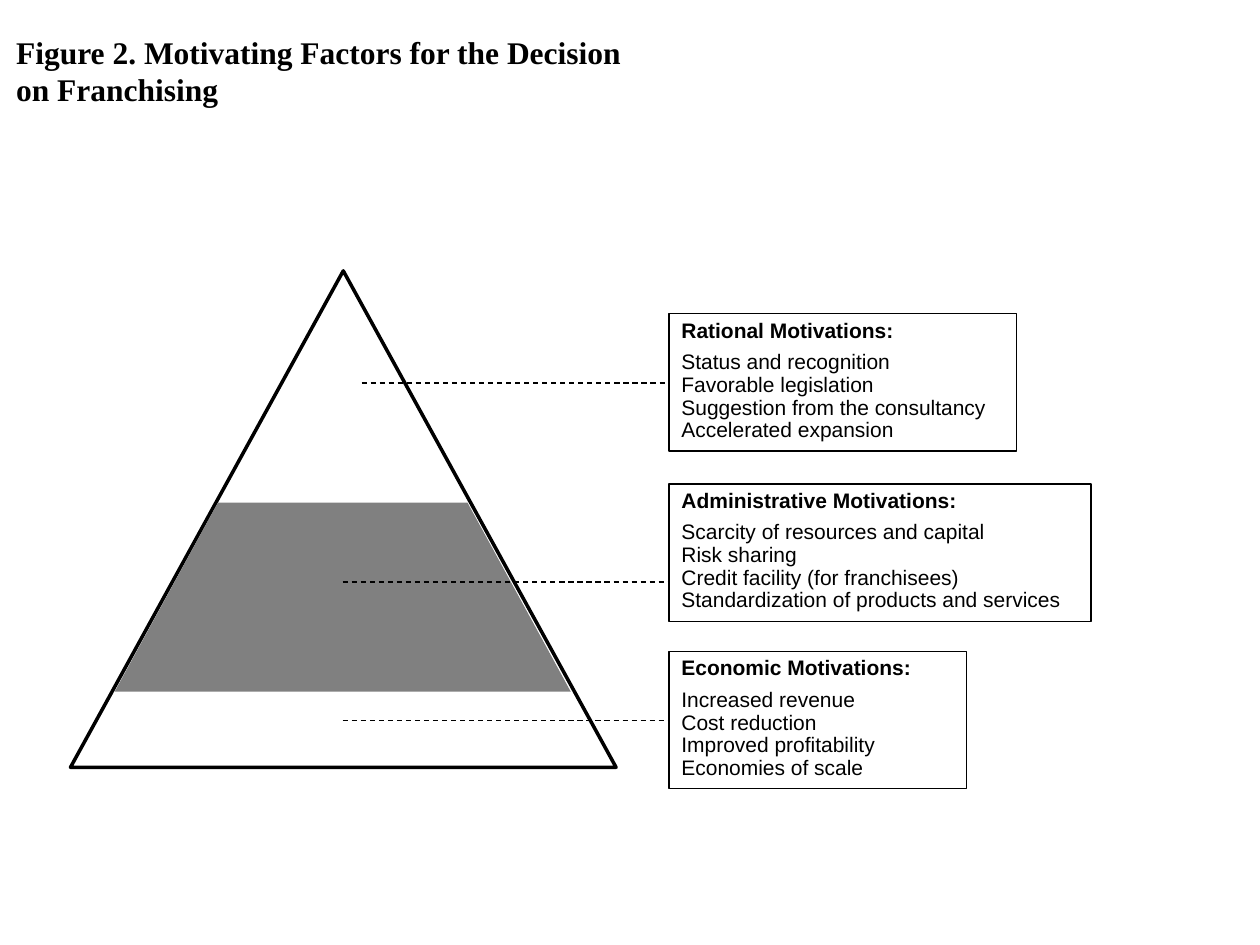
from dataclasses import dataclass

from lxml.etree import SubElement
from pptx import Presentation
from pptx.dml.color import RGBColor
from pptx.enum.dml import MSO_LINE
from pptx.enum.shapes import MSO_CONNECTOR, MSO_SHAPE
from pptx.enum.text import MSO_ANCHOR, PP_ALIGN
from pptx.oxml.ns import qn
from pptx.shapes.autoshape import Shape
from pptx.slide import Slide
from pptx.text.text import TextFrame, _Paragraph
from pptx.util import Emu, Inches, Pt

COLUMNS, ROWS = 100, 75
SLIDE_WIDTH, SLIDE_HEIGHT = Inches(10), Inches(7.5)


@dataclass(frozen=True)
class Theme:
    ink: RGBColor = RGBColor(0x00, 0x00, 0x00)
    paper: RGBColor = RGBColor(0xFF, 0xFF, 0xFF)
    band: RGBColor = RGBColor(0x80, 0x80, 0x80)
    title_font: str = "Times New Roman"
    body_font: str = "Arial"
    title_size: Pt = Pt(18)
    body_size: Pt = Pt(12)
    heading_gap: Pt = Pt(5.2)
    line_spacing: float = 0.9
    thin: Pt = Pt(0.75)
    thick: Pt = Pt(2)


@dataclass(frozen=True)
class Area:
    """A rectangle in grid columns and rows."""
    left: float
    top: float
    width: float
    height: float

    def lengths(self) -> tuple[Emu, Emu, Emu, Emu]:
        return (across(self.left), down(self.top),
                across(self.width), down(self.height))


@dataclass(frozen=True)
class Motivation:
    heading: str
    factors: tuple[str, ...]
    top: float
    width: float
    leader_start: float
    leader_row: float


THEME = Theme()
TITLE = "Figure 2. Motivating Factors for the Decision on Franchising"
TITLE_AREA = Area(0.3, 2.1, 50, 10.1)
PYRAMID = Area(5.6, 21.5, 43.3, 39.4)
MIDDLE_BAND = Area(9.1, 39.9, 36.2, 15)
BAND_SLOPE = 0.546
BOX_LEFT, BOX_HEIGHT = 53.1, 10.9
LEADER_LENGTH = 35.4
MOTIVATIONS = (
    Motivation("Rational Motivations:",
               ("Status and recognition", "Favorable legislation",
                "Suggestion from the consultancy", "Accelerated expansion"),
               24.9, 27.6, 28.7, 30.4),
    Motivation("Administrative Motivations:",
               ("Scarcity of resources and capital", "Risk sharing",
                "Credit facility (for franchisees)",
                "Standardization of products and services"),
               38.4, 33.5, 27.2, 46.2),
    Motivation("Economic Motivations:",
               ("Increased revenue", "Cost reduction",
                "Improved profitability", "Economies of scale"),
               51.7, 23.6, 27.2, 57.2),
)


def across(columns: float) -> Emu:
    return Emu(round(SLIDE_WIDTH * columns / COLUMNS))


def down(rows: float) -> Emu:
    return Emu(round(SLIDE_HEIGHT * rows / ROWS))


def add_figure(slide: Slide, kind: MSO_SHAPE, area: Area, fill: RGBColor,
               outline: Pt | None = None) -> Shape:
    shape = slide.shapes.add_shape(kind, *area.lengths())
    shape.shadow.inherit = False
    shape.fill.solid()
    shape.fill.fore_color.rgb = fill
    if outline is None:
        shape.line.fill.background()
    else:
        shape.line.color.rgb = THEME.ink
        shape.line.width = outline
    return shape


def add_text(paragraph: _Paragraph, text: str, font: str, size: Pt,
             bold: bool) -> None:
    paragraph.alignment = PP_ALIGN.LEFT
    run = paragraph.add_run()
    run.text = text
    run.font.name = font
    run.font.size = size
    run.font.bold = bold
    run.font.color.rgb = THEME.ink


def add_title(slide: Slide) -> None:
    frame = slide.shapes.add_textbox(*TITLE_AREA.lengths()).text_frame
    frame.word_wrap = True
    add_text(frame.paragraphs[0], TITLE, THEME.title_font,
             THEME.title_size, bold=True)


def add_leader(slide: Slide, motivation: Motivation) -> None:
    """Draw a dashed line that runs on behind the motivation's box."""
    row = down(motivation.leader_row)
    leader = slide.shapes.add_connector(
        MSO_CONNECTOR.STRAIGHT, across(motivation.leader_start), row,
        across(motivation.leader_start + LEADER_LENGTH), row)
    leader.line.color.rgb = THEME.ink
    leader.line.width = THEME.thin
    leader.line.dash_style = MSO_LINE.DASH
    SubElement(leader._element.spPr, qn("a:effectLst"))


def write_motivation(frame: TextFrame, motivation: Motivation) -> None:
    heading = frame.paragraphs[0]
    heading.line_spacing = THEME.line_spacing
    heading.space_after = THEME.heading_gap
    add_text(heading, motivation.heading, THEME.body_font,
             THEME.body_size, bold=True)
    for factor in motivation.factors:
        paragraph = frame.add_paragraph()
        paragraph.line_spacing = THEME.line_spacing
        add_text(paragraph, factor, THEME.body_font,
                 THEME.body_size, bold=False)


def add_motivation_box(slide: Slide, motivation: Motivation) -> None:
    area = Area(BOX_LEFT, motivation.top, motivation.width, BOX_HEIGHT)
    box = add_figure(slide, MSO_SHAPE.RECTANGLE, area, THEME.paper, THEME.thin)
    frame = box.text_frame
    frame.word_wrap = True
    frame.vertical_anchor = MSO_ANCHOR.TOP
    write_motivation(frame, motivation)


def main() -> None:
    presentation = Presentation()
    presentation.slide_width = SLIDE_WIDTH
    presentation.slide_height = SLIDE_HEIGHT
    slide = presentation.slides.add_slide(presentation.slide_layouts[6])

    add_figure(slide, MSO_SHAPE.ISOSCELES_TRIANGLE, PYRAMID,
               THEME.paper, THEME.thick)
    band = add_figure(slide, MSO_SHAPE.TRAPEZOID, MIDDLE_BAND, THEME.band)
    band.adjustments[0] = BAND_SLOPE
    for motivation in MOTIVATIONS:
        add_leader(slide, motivation)
    for motivation in MOTIVATIONS:
        add_motivation_box(slide, motivation)
    add_title(slide)

    presentation.save("out.pptx")


if __name__ == "__main__":
    main()
